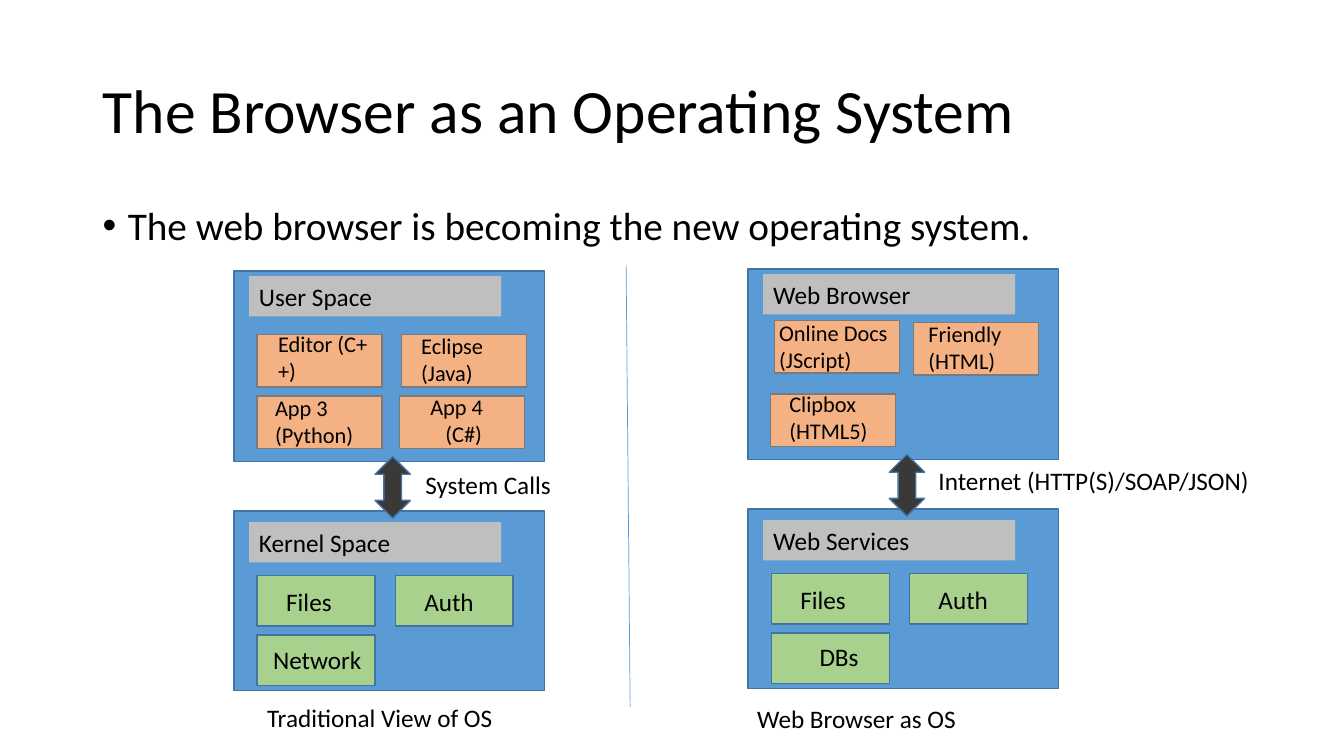
"""Build a slide comparing a traditional operating system with the web browser."""
import pptx
import pptx.dml.color
import pptx.enum.shapes
import pptx.enum.text
import pptx.oxml
import pptx.oxml.ns
import pptx.util

Inches = pptx.util.Inches
RGBColor = pptx.dml.color.RGBColor
Shape = pptx.enum.shapes.MSO_SHAPE
Anchor = pptx.enum.text.MSO_ANCHOR

BLACK = RGBColor(0x00, 0x00, 0x00)
BLUE = RGBColor(0x5B, 0x9B, 0xD5)
NAVY = RGBColor(0x43, 0x73, 0x9E)
SILVER = RGBColor(0xBF, 0xBF, 0xBF)
ORANGE = RGBColor(0xF4, 0xB1, 0x83)
GRAY = RGBColor(0x7A, 0x7A, 0x7A)
GREEN = RGBColor(0xA9, 0xD1, 0x8E)
CHARCOAL = RGBColor(0x3B, 0x38, 0x38)

APP_SIZE = (1.24, 0.52)
SERVICE_SIZE = (1.17, 0.5)
SERVICE_SPOTS = [(0.23, 0.64), (1.6, 0.64), (0.23, 1.23)]

VIEWS = [
    {
        "left": 2.32, "top": 2.69,
        "headings": ("User Space", "Kernel Space"),
        "apps": [
            ("Editor (C++)", (2.55, 3.32), (2.66, 3.23, 1.15)),
            ("Eclipse (Java)", (3.98, 3.32), (4.08, 3.25, 1.3)),
            ("App 3 (Python)", (2.55, 3.93), (2.63, 3.86, 1.34)),
            ("App 4\n(C#)", (3.96, 3.93), (4.17, 3.85, 1.34)),
        ],
        "services": [("Files", 0.19, 0.06), ("Auth", 0.19, 0.06), ("Network", 0.06, 0.04)],
        "link": ("System Calls", (4.12, 4.61, 1.8)),
        "caption": ("Traditional View of OS", (2.55, 6.92, 2.82)),
    },
    {
        "left": 7.42, "top": 2.67,
        "headings": ("Web Browser", "Web Services"),
        "apps": [
            ("Online Docs (JScript)", (7.68, 3.18), (7.63, 3.12, 1.4)),
            ("Friendly\n(HTML)", (9.06, 3.2), (9.11, 3.13, 1.15)),
            ("Clipbox (HTML5)", (7.64, 3.91), (7.73, 3.82, 1.15)),
        ],
        "services": [("Files", 0.19, 0.06), ("Auth", 0.19, 0.06), ("DBs", 0.38, 0.03)],
        "link": ("Internet (HTTP(S)/SOAP/JSON)", (9.21, 4.57, 3.8)),
        "caption": ("Web Browser as OS", (7.41, 6.93, 2.82)),
    },
]


class Page:
    """Hold the text style and the current slide."""

    font = "Calibri"
    color = BLACK

    def __init__(self, deck):
        self.slide = deck.slides.add_slide(deck.slide_layouts[5])
        self.shapes = self.slide.shapes

    def fill_text(self, box, text, size):
        frame = box.text_frame
        frame.word_wrap = True
        frame.text = text
        for para in frame.paragraphs:
            para.alignment = pptx.enum.text.PP_ALIGN.LEFT
            for span in para.runs:
                span.font.name = self.font
                span.font.size = pptx.util.Pt(size)
                span.font.color.rgb = self.color
        return frame

    def title(self, text, left, top, width, height):
        box = self.shapes.title
        box.left, box.top = Inches(left), Inches(top)
        box.width, box.height = Inches(width), Inches(height)
        frame = self.fill_text(box, text, 44)
        frame.auto_size = pptx.enum.text.MSO_AUTO_SIZE.NONE
        frame.vertical_anchor = Anchor.MIDDLE
        frame.paragraphs[0].line_spacing = 0.9

    def label(self, text, left, top, width, height=0.4, size=18):
        box = self.shapes.add_textbox(Inches(left), Inches(top), Inches(width), Inches(height))
        return self.fill_text(box, text, size)

    def bullet(self, text, left, top, width, height):
        para = self.label(text, left, top, width, height, 28).paragraphs[0]
        para.line_spacing = 0.9
        self.indent(para, 0.25, -0.25)
        namespace = pptx.oxml.ns.nsdecls("a")
        for markup in (f'<a:buFont {namespace} typeface="Arial"/>', f'<a:buChar {namespace} char="•"/>'):
            para._p.get_or_add_pPr().append(pptx.oxml.parse_xml(markup))

    def indent(self, para, margin, first=0):
        properties = para._p.get_or_add_pPr()
        properties.set("marL", str(Inches(margin)))
        properties.set("indent", str(Inches(first)))

    def block(self, left, top, size, fill, line=NAVY, kind=Shape.RECTANGLE):
        width, height = size
        box = self.shapes.add_shape(kind, Inches(left), Inches(top), Inches(width), Inches(height))
        box.shadow.inherit = False
        box.fill.solid()
        box.fill.fore_color.rgb = fill
        if line is None:
            box.line.fill.background()
        else:
            box.line.color.rgb = line
            box.line.width = pptx.util.Pt(1)
        return box

    def panel(self, left, top, height, heading, heading_gap):
        self.block(left, top, (3.08, height), BLUE)
        bar = self.block(left + 0.15, top + heading_gap, (2.5, 0.4), SILVER, None)
        self.fill_text(bar, heading, 18).vertical_anchor = Anchor.TOP

    def divider(self, start, end):
        line = self.shapes.add_connector(
            pptx.enum.shapes.MSO_CONNECTOR.STRAIGHT, *map(Inches, start + end))
        line.line.color.rgb = BLUE
        line.line.width = pptx.util.Pt(0.5)
        effects = f'<a:effectLst {pptx.oxml.ns.nsdecls("a")}/>'
        line._element.spPr.append(pptx.oxml.parse_xml(effects))

    def view(self, left, top, headings, apps, services, link, caption):
        lower = top + 2.38
        self.panel(left, top, 1.89, headings[0], 0.05)
        self.panel(left, lower, 1.78, headings[1], 0.11)
        for text, spot, place in apps:
            self.block(*spot, APP_SIZE, ORANGE, GRAY)
            frame = self.label(text, *place, height=0.64, size=16)
            if text.endswith("\n(C#)"):
                self.indent(frame.paragraphs[1], 0.15)
        for (text, inset, drop), (across, down) in zip(services, SERVICE_SPOTS):
            self.block(left + across, lower + down, SERVICE_SIZE, GREEN)
            self.label(text, left + across + inset, lower + down + drop, 1.17)
        self.block(left + 1.4, top + 1.84, (0.35, 0.61), CHARCOAL, kind=Shape.UP_DOWN_ARROW)
        for text, place in (link, caption):
            self.label(text, *place)


def main():
    deck = pptx.Presentation()
    deck.slide_width, deck.slide_height = Inches(13.33), Inches(7.5)
    page = Page(deck)
    page.title("The Browser as an Operating System", 0.92, 0.4, 11.5, 1.45)
    page.bullet("The web browser is becoming the new operating system.", 0.92, 2, 11.5, 0.6)
    page.divider((6.21, 2.63), (6.25, 7.01))
    for view in VIEWS:
        page.view(**view)
    deck.save("out.pptx")


if __name__ == "__main__":
    main()
